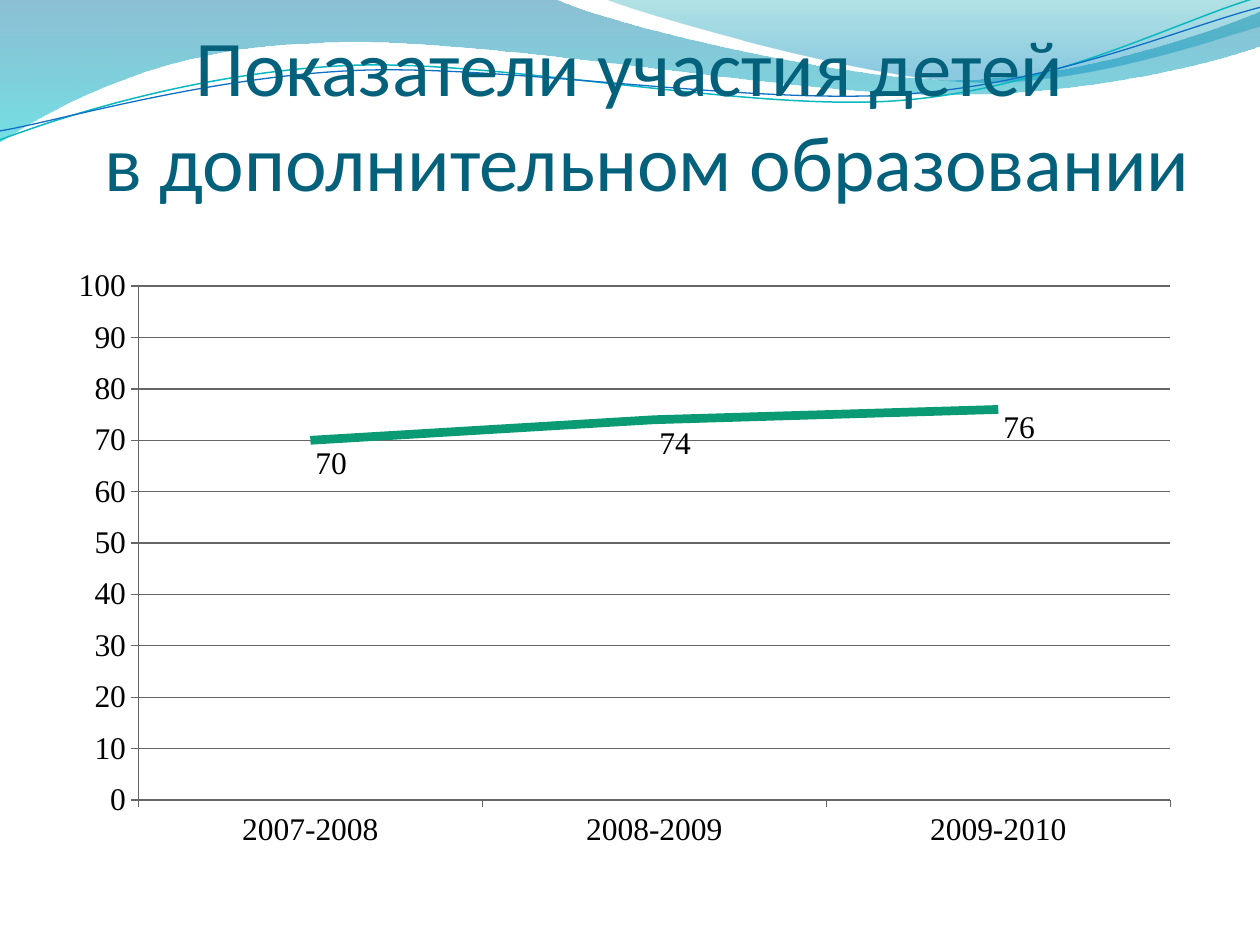
import lxml.etree
import pptx
import pptx.chart.data
import pptx.dml.color
import pptx.enum.chart
import pptx.enum.text
import pptx.oxml
import pptx.oxml.ns
import pptx.util
from pptx.oxml.ns import qn
from pptx.util import Cm, Pt

TOP_BAND = [[(0, 0)], [(11.18, -0.03)],
            [(12.09, 0.43), (16.87, 1.6), (19.25, 1.6)],
            [(21.67, 1.6), (24.33, 0.66), (25.4, 0.23)], [(25.43, 0.91)],
            [(24.97, 1.12), (22.1, 1.93), (18.95, 1.91)],
            [(15.8, 1.9), (9.7, 0.71), (6.53, 0.86)],
            [(3.28, 0.91), (1.17, 2.11), (-0.03, 2.87)]]
RIGHT_BAND = [[(12.17, -0.03)],
              [(12.93, 0.28), (17.32, 1.57), (19.53, 1.65)],
              [(21.74, 1.75), (24.41, 0.81), (25.4, 0.53)], [(25.4, 0)]]
TEAL_WAVE = [[(0, 2.82)],
             [(1.22, 2.36), (4.01, 1.45), (7.04, 1.32)],
             [(10.03, 1.19), (15.06, 2.26), (18.11, 2.03)],
             [(21.16, 1.8), (23.83, 0.38), (25.35, -0.05)]]
BLUE_WAVE = [[(0, 2.64)],
             [(1.19, 2.44), (4.17, 1.55), (7.19, 1.42)],
             [(10.24, 1.3), (15.16, 2.13), (18.21, 1.9)],
             [(21.23, 1.7), (23.9, 0.53), (25.4, 0.15)]]


def rgb(value):
    """Return the colour for a hex string."""
    return pptx.dml.color.RGBColor.from_string(value)


def add_outline(s, segments, close):
    """Draw lines (one point) and curves (three points) given in centimetres."""
    points = [(Cm(x), Cm(y)) for segment in segments for x, y in segment]
    builder = s.shapes.build_freeform(*points[0])
    builder.add_line_segments(points[1:], close=close)
    sp = builder.convert_to_shape()
    sp.shadow.inherit = False
    lines = iter(list(sp.element.iter(qn("a:lnTo"))))
    for segment in segments[1:]:
        steps = [next(lines) for _ in segment]
        if len(steps) == 3:
            curve = lxml.etree.Element(qn("a:cubicBezTo"))
            steps[0].addprevious(curve)
            for step in steps:
                curve.append(step[0])
                step.getparent().remove(step)
    return sp


def add_band(s, segments, stops):
    """Add a band with a translucent downward gradient."""
    sp = add_outline(s, segments, True)
    sp.line.fill.background()
    sp.fill.gradient()
    sp.fill.gradient_angle = 270
    for stop, (position, colour, _) in zip(sp.fill.gradient_stops, stops):
        stop.position = position
        stop.color.rgb = rgb(colour)
    for element, (_, _, opacity) in zip(sp.element.iter(qn("a:srgbClr")), stops):
        lxml.etree.SubElement(element, qn("a:alpha")).set("val", str(opacity * 1000))


def add_wave(s, segments, colour, width):
    """Add a thin open wave."""
    sp = add_outline(s, segments, False)
    sp.fill.background()
    sp.line.color.rgb = rgb(colour)
    sp.line.width = Pt(width)


def set_title(s, text):
    """Place and format the title in front of the waves."""
    sp = s.shapes.title
    sp.element.getparent().append(sp.element)
    sp.left, sp.top, sp.width, sp.height = Cm(0.58), Cm(1.96), Cm(24.21), Cm(2.21)
    tf = sp.text_frame
    tf.text = text
    tf.word_wrap = True
    tf.auto_size = pptx.enum.text.MSO_AUTO_SIZE.NONE
    tf.vertical_anchor = pptx.enum.text.MSO_ANCHOR.BOTTOM
    tf.margin_left = tf.margin_right = tf.margin_bottom = 0
    tf.margin_top = Cm(0.13)
    p = tf.paragraphs[0]
    p.alignment = pptx.enum.text.PP_ALIGN.CENTER
    for r in p.runs:
        r.font.name, r.font.size = "Calibri", Pt(45)
        r.font.color.rgb = rgb("04617B")


def layout_xml(**values):
    """Return a manual chart layout element."""
    items = "".join(f'<c:{name} val="{value}"/>' for name, value in values.items())
    return pptx.oxml.parse_xml(
        f'<c:layout {pptx.oxml.ns.nsdecls("c")}><c:manualLayout>{items}'
        '</c:manualLayout></c:layout>')


def style_line(line):
    """Give an axis or gridline a thin grey line."""
    line.color.rgb = rgb("666666")
    line.width = Pt(0.75)


def style_axis(axis):
    """Give an axis a thin line and outside ticks."""
    style_line(axis.format.line)
    axis.major_tick_mark = pptx.enum.chart.XL_TICK_MARK.OUTSIDE
    axis.minor_tick_mark = pptx.enum.chart.XL_TICK_MARK.NONE


def style_font(font):
    """Set the chart font."""
    font.name, font.size = "Times New Roman", Pt(18)
    font.color.rgb = rgb("000000")


def add_labels(chart, series, drops):
    """Label each point to its right, lowered by a share of the chart height."""
    for i in range(len(drops)):
        label = series.points[i].data_label
        style_font(label.font)
        label.position = pptx.enum.chart.XL_LABEL_POSITION.RIGHT
    for label, drop in zip(chart.element.iter(qn("c:dLbl")), drops):
        label.find(qn("c:idx")).addnext(layout_xml(x=0, y=drop))


def add_line_chart(s, categories, values):
    """Add the line chart of participation by school year."""
    data = pptx.chart.data.CategoryChartData()
    data.categories = categories
    data.add_series("Series 1", values)
    chart = s.shapes.add_chart(pptx.enum.chart.XL_CHART_TYPE.LINE_STACKED, Cm(1.19),
                               Cm(5.16), Cm(22.86), Cm(12.19), data).chart
    chart.has_legend = chart.has_title = False
    style_font(chart.font)
    style_axis(chart.category_axis)
    axis = chart.value_axis
    style_axis(axis)
    axis.minimum_scale, axis.maximum_scale, axis.major_unit = 0, 100, 10
    axis.has_major_gridlines = True
    style_line(axis.major_gridlines.format.line)
    plot = chart.plots[0]
    plot.vary_by_categories = False
    series = plot.series[0]
    series.smooth = False
    series.marker.style = pptx.enum.chart.XL_MARKER_STYLE.NONE
    series.format.line.color.rgb = rgb("0B9B74")
    series.format.line.width = Pt(5)
    add_labels(chart, series, [0.04, 0.04, 0.03])
    area = chart.element.find(".//" + qn("c:plotArea"))
    for old in area.findall(qn("c:layout")):
        area.remove(old)
    area.insert(0, layout_xml(layoutTarget="inner", xMode="edge", yMode="edge",
                              x=0.07, y=0.05, w=0.91, h=0.85))


def main():
    """Build the slide and save it."""
    prs = pptx.Presentation()
    prs.slide_width, prs.slide_height = Cm(25.4), Cm(19.05)
    s = prs.slides.add_slide(prs.slide_layouts[5])
    add_band(s, TOP_BAND, [(0, "0074A1", 45), (1, "00C6CF", 55)])
    add_band(s, RIGHT_BAND, [(0, "00A1A9", 30), (0.8, "008BBF", 45)])
    add_wave(s, TEAL_WAVE, "0AB8BF", 0.85)
    add_wave(s, BLUE_WAVE, "0F6FC6", 0.75)
    set_title(s, "Показатели участия детей\v  в дополнительном образовании")
    add_line_chart(s, ["2007-2008", "2008-2009", "2009-2010"], [70, 74, 76])
    prs.save("out.pptx")


if __name__ == "__main__":
    main()
